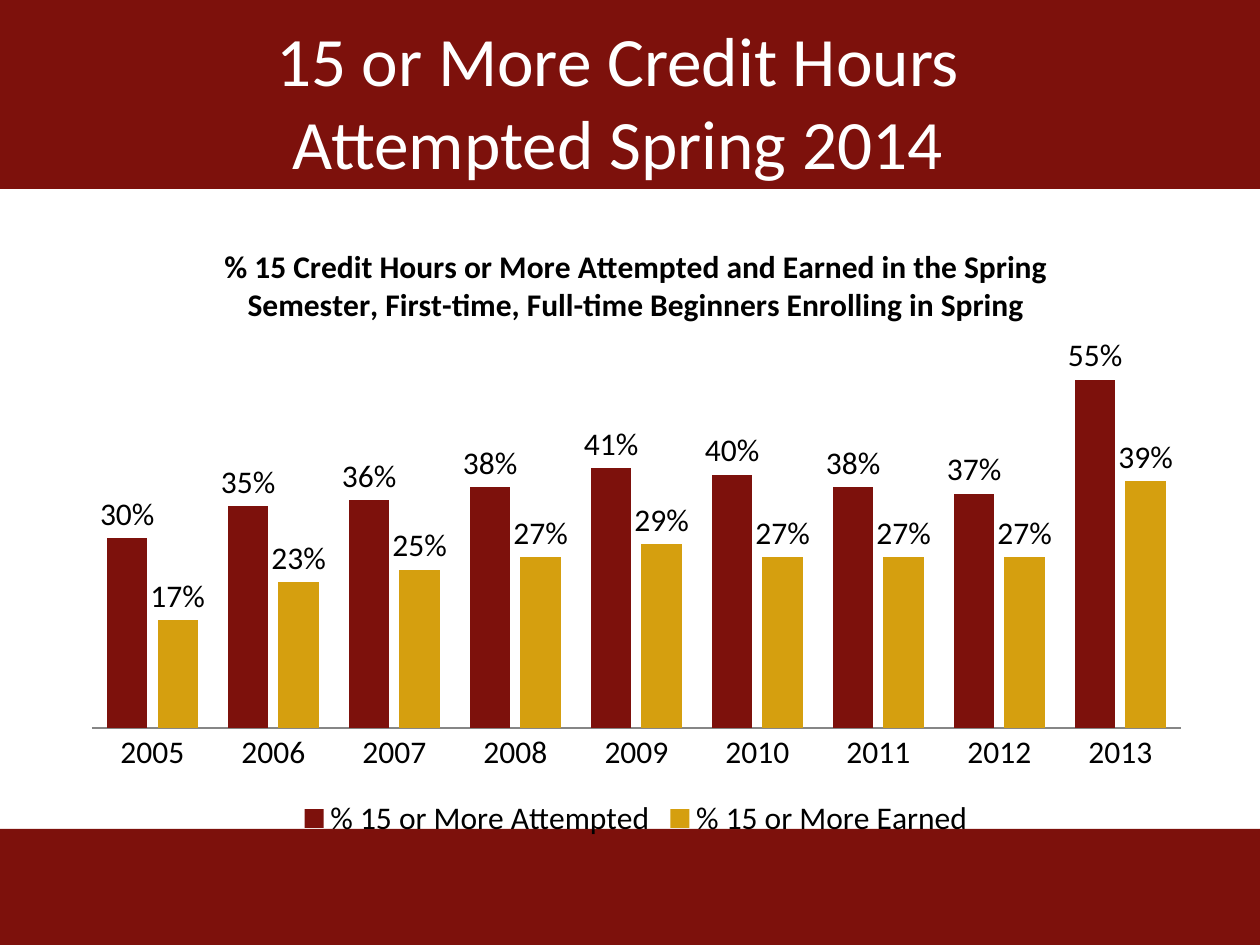
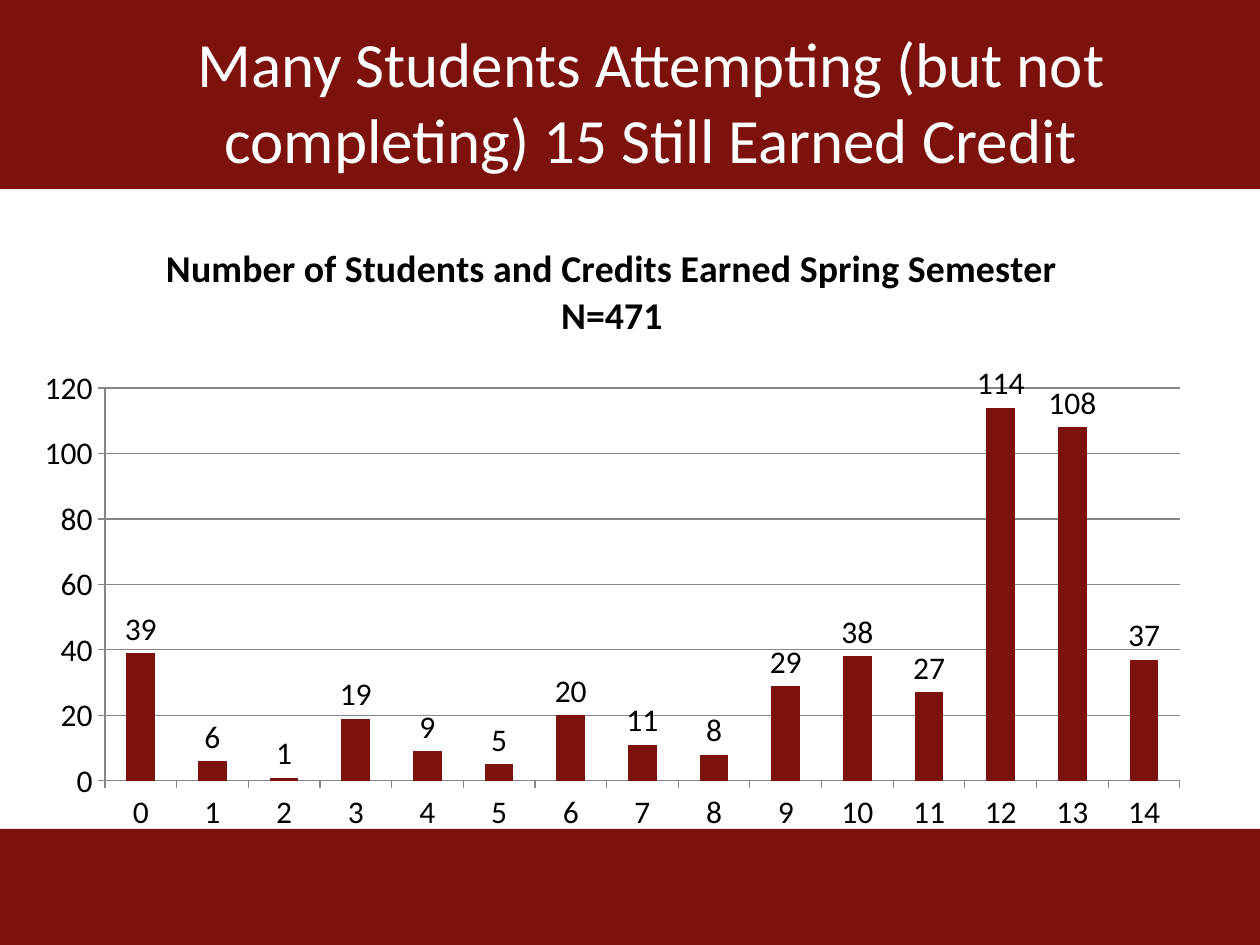
from lxml import etree
from pptx import Presentation
from pptx import util as u
from pptx.chart import data as chart_data
from pptx.dml.color import RGBColor
from pptx.enum import chart as ch, shapes, text
from pptx.oxml import ns

MAROON = RGBColor(0x7D, 0x11, 0x0C)
GOLD = RGBColor(0xD5, 0x9F, 0x0F)
WHITE = RGBColor(0xFF, 0xFF, 0xFF)
BLACK = RGBColor(0, 0, 0)
GRAY = RGBColor(0x86, 0x86, 0x86)
FONT = "Calibri"

SLIDE_W, SLIDE_H = 1260, 945
BANDS = [(0, 0, SLIDE_W, 189), (0, 829, SLIDE_W, 116)]
TITLE_TOP, TITLE_W, TITLE_H = 21, 966, 158
CHART_TOP, CHART_H = 220, 624

SLIDES = [
    {
        "title": "15 or More Credit Hours Attempted Spring 2014",
        "title_size": 39.6,
        "title_left": 135,
        "chart_title": "% 15 Credit Hours or More Attempted and Earned in the Spring "
                       "Semester, First-time, Full-time Beginners Enrolling in Spring",
        "chart_title_size": 18,
        "chart_x": (69, 1134),
        "plot": (92, 348, 1089, 380),
        "categories": range(2005, 2014),
        "series": [
            ("% 15 or More Attempted", MAROON,
             (0.30, 0.35, 0.36, 0.38, 0.41, 0.40, 0.38, 0.37, 0.55)),
            ("% 15 or More Earned", GOLD,
             (0.17, 0.23, 0.25, 0.27, 0.29, 0.27, 0.27, 0.27, 0.39)),
        ],
        "format": "0%",
        "maximum": 0.6,
        "step": 0.1,
        "gap": 75,
        "overlap": -25,
        "value_axis": False,
        "legend": True,
    },
    {
        "title": "Many Students Attempting (but not completing) 15 Still Earned Credit",
        "title_size": 36,
        "title_left": 168,
        "chart_title": "Number of Students and Credits Earned Spring Semester\nN=471",
        "chart_title_size": 21.6,
        "chart_x": (21, 1182),
        "plot": (105, 388, 1075, 393),
        "categories": range(15),
        "series": [
            ("Series 1", MAROON,
             (39, 6, 1, 19, 9, 5, 20, 11, 8, 29, 38, 27, 114, 108, 37)),
        ],
        "format": "###0",
        "maximum": 120,
        "step": 20,
        "gap": 150,
        "overlap": 0,
        "value_axis": True,
        "legend": False,
    },
]


def px(n):
    return u.Emu(round(n * 914400 / 126))


def set_font(font, size, color, bold=False):
    font.name, font.size, font.bold = FONT, u.Pt(size), bold
    font.color.rgb = color


def add_bands(s):
    for box in BANDS:
        sp = s.shapes.add_shape(shapes.MSO_SHAPE.RECTANGLE, *map(px, box))
        sp.shadow.inherit = False
        sp.fill.solid()
        sp.fill.fore_color.rgb = MAROON
        sp.line.fill.background()


def add_title(s, spec_):
    sp = s.shapes.add_textbox(*map(px, (spec_["title_left"], TITLE_TOP, TITLE_W, TITLE_H)))
    tf = sp.text_frame
    tf.word_wrap = True
    tf.vertical_anchor = text.MSO_ANCHOR.MIDDLE
    p = tf.paragraphs[0]
    p.text = spec_["title"]
    p.alignment = text.PP_ALIGN.CENTER
    set_font(p.font, spec_["title_size"], WHITE)


def place_plot(chart, plot, frame):
    area = chart._chartSpace.chart.plotArea
    for old in area.findall(ns.qn("c:layout")):
        area.remove(old)
    layout = etree.Element(ns.qn("c:layout"))
    manual = etree.SubElement(layout, ns.qn("c:manualLayout"))
    left, top, width, height = frame
    x, y, w, h = plot
    settings = [("layoutTarget", "inner"), ("xMode", "edge"), ("yMode", "edge"),
                ("x", (x - left) / width), ("y", (y - top) / height),
                ("w", w / width), ("h", h / height)]
    for tag, value in settings:
        etree.SubElement(manual, ns.qn("c:" + tag)).set("val", str(value))
    area.insert(0, layout)


def style_axes(chart, spec_):
    outside, none = ch.XL_TICK_MARK.OUTSIDE, ch.XL_TICK_MARK.NONE
    category, value = chart.category_axis, chart.value_axis
    value.minimum_scale, value.maximum_scale = 0, spec_["maximum"]
    value.major_unit = spec_["step"]
    value.visible = value.has_major_gridlines = spec_["value_axis"]
    value.tick_labels.number_format = spec_["format"]
    value.tick_labels.number_format_is_linked = False
    for axis in (category, value):
        axis.major_tick_mark = outside if spec_["value_axis"] else none
        axis.minor_tick_mark = none
        axis.format.line.color.rgb = GRAY
        axis.format.line.width = u.Pt(0.75)
    if spec_["value_axis"]:
        value.major_gridlines.format.line.color.rgb = GRAY
        value.major_gridlines.format.line.width = u.Pt(0.75)


def style_columns(plot, spec_):
    plot.gap_width, plot.overlap = spec_["gap"], spec_["overlap"]
    plot.vary_by_categories = False
    for series, (_, color, _) in zip(plot.series, spec_["series"]):
        series.invert_if_negative = False
        series.format.fill.solid()
        series.format.fill.fore_color.rgb = color
        labels = series.data_labels
        labels.show_value = True
        labels.position = ch.XL_LABEL_POSITION.OUTSIDE_END
        labels.number_format = spec_["format"]
        labels.number_format_is_linked = False
        set_font(labels.font, 18, BLACK)


def add_column_chart(s, spec_):
    data = chart_data.CategoryChartData(number_format=spec_["format"])
    data.categories = [str(c) for c in spec_["categories"]]
    for name, _, values in spec_["series"]:
        data.add_series(name, values)
    left, width = spec_["chart_x"]
    frame = (left, CHART_TOP, width, CHART_H)
    chart = s.shapes.add_chart(ch.XL_CHART_TYPE.COLUMN_CLUSTERED, *map(px, frame), data).chart
    set_font(chart.font, 18, BLACK)
    chart.has_title = True
    tf = chart.chart_title.text_frame
    tf.text = spec_["chart_title"]
    for p in tf.paragraphs:
        set_font(p.font, spec_["chart_title_size"], BLACK, True)
    chart.has_legend = spec_["legend"]
    if spec_["legend"]:
        chart.legend.position = ch.XL_LEGEND_POSITION.BOTTOM
        chart.legend.include_in_layout = False
    style_axes(chart, spec_)
    style_columns(chart.plots[0], spec_)
    place_plot(chart, spec_["plot"], frame)


def main():
    prs = Presentation()
    prs.slide_width, prs.slide_height = px(SLIDE_W), px(SLIDE_H)
    for spec_ in SLIDES:
        s = prs.slides.add_slide(prs.slide_layouts[6])
        add_bands(s)
        add_title(s, spec_)
        add_column_chart(s, spec_)
    prs.save("out.pptx")


if __name__ == "__main__":
    main()
